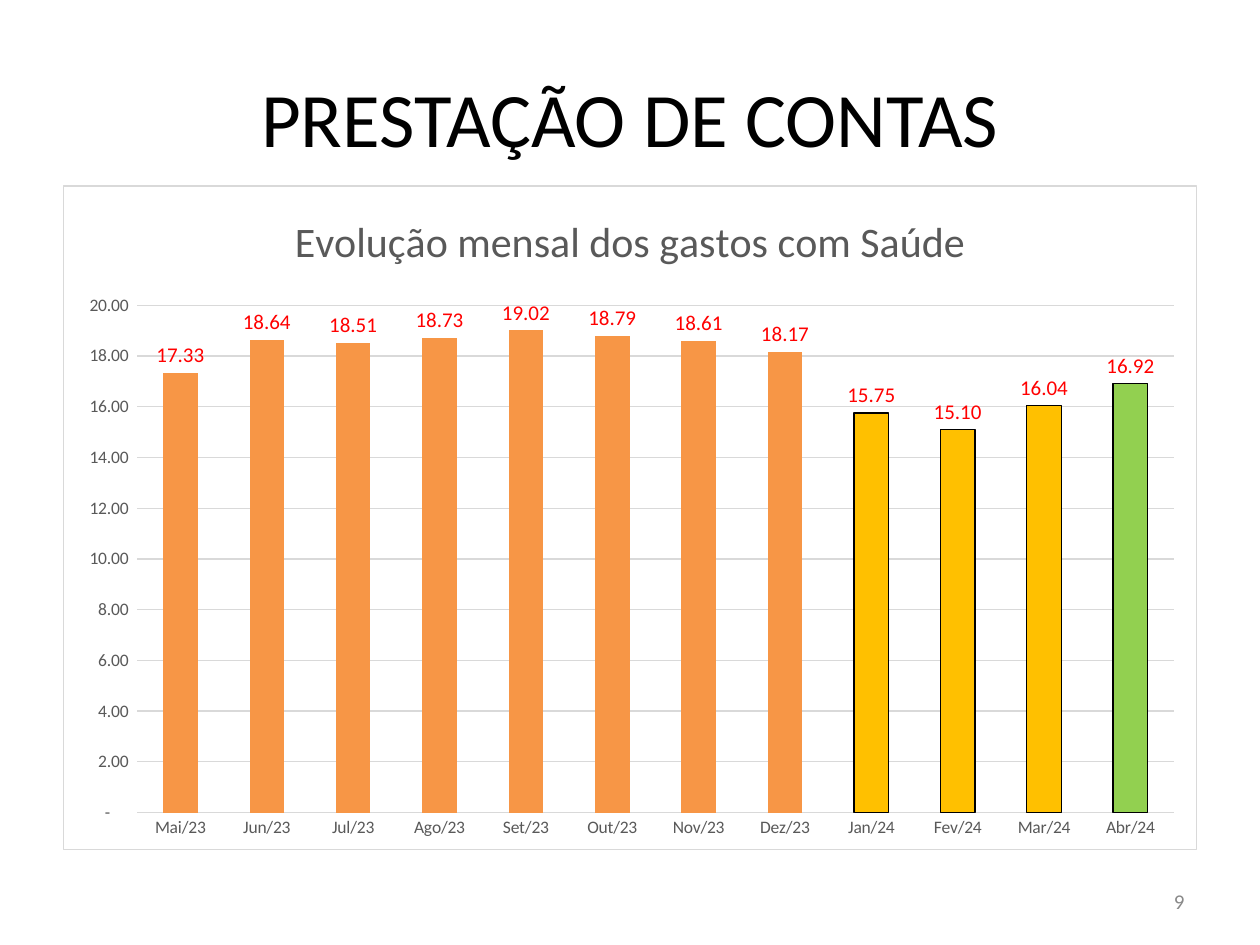
from dataclasses import dataclass

from lxml import etree
from pptx import Presentation
from pptx.chart.data import CategoryChartData
from pptx.dml.color import RGBColor as RGB
from pptx.enum.chart import XL_CHART_TYPE as ChartType
from pptx.enum.chart import XL_LABEL_POSITION as LabelPos
from pptx.enum.chart import XL_TICK_MARK as Tick
from pptx.enum.text import MSO_ANCHOR as Anchor
from pptx.enum.text import PP_ALIGN as Align
from pptx.oxml import parse_xml
from pptx.oxml.ns import nsdecls, qn
from pptx.util import Inches, Pt


@dataclass(frozen=True)
class Theme:
    font: str = "Calibri"
    white: str = "FFFFFF"
    black: str = "000000"
    grey: str = "595959"
    page_grey: str = "898989"
    rule: str = "D9D9D9"
    label: str = "FF0000"
    series: str = "4F81BD"
    year_2023: str = "F79646"
    year_2024: str = "FFC000"
    latest: str = "92D050"
    title_size: int = 44
    chart_title_size: int = 24
    label_size: int = 12
    axis_size: int = 10


T = Theme()
NUMBER_FORMAT = r'_(* #,##0.00_);_(* \(#,##0.00\);_(* "-"??_);_(@_)'


def style_font(font, size, color):
    font.name = T.font
    font.size = Pt(size)
    font.bold = False
    font.color.rgb = RGB.from_string(color)


def add_text(s, text, box, size, color, align):
    sp = s.shapes.add_textbox(*map(Inches, box))
    tf = sp.text_frame
    tf.word_wrap = True
    tf.vertical_anchor = Anchor.MIDDLE
    tf.text = text
    p = tf.paragraphs[0]
    p.alignment = align
    style_font(p.runs[0].font, size, color)
    return sp


prs = Presentation()
prs.slide_width, prs.slide_height = Inches(10), Inches(7.5)
s = prs.slides.add_slide(prs.slide_layouts[6])

# Page number and title
add_text(s, "9", (7.17, 6.95, 2.33, 0.4), T.label_size, T.page_grey, Align.RIGHT)
title = add_text(s, "PRESTAÇÃO DE CONTAS", (0.5, 0.3, 9, 1.25),
                 T.title_size, T.black, Align.CENTER)
title.fill.solid()
title.fill.fore_color.rgb = RGB.from_string(T.white)

# Monthly health spending
spending = {
    "Mai/23": 17.33, "Jun/23": 18.64, "Jul/23": 18.51, "Ago/23": 18.73,
    "Set/23": 19.02, "Out/23": 18.79, "Nov/23": 18.61, "Dez/23": 18.17,
    "Jan/24": 15.75, "Fev/24": 15.10, "Mar/24": 16.04, "Abr/24": 16.92,
}
data = CategoryChartData(number_format=NUMBER_FORMAT)
data.categories = list(spending)
data.add_series("Series 1", list(spending.values()))
chart = s.shapes.add_chart(ChartType.COLUMN_CLUSTERED, Inches(0.5), Inches(1.47),
                           Inches(9), Inches(5.28), data).chart
style_font(chart.font, T.axis_size, T.black)
chart.has_legend = False
chart.has_title = True
tf = chart.chart_title.text_frame
tf.text = "Evolução mensal dos gastos com Saúde"
style_font(tf.paragraphs[0].runs[0].font, T.chart_title_size, T.grey)
chart.chart_title.include_in_layout = False

# Chart frame and plot position
chart_xml = chart.element.find(qn("c:chart"))
chart_xml.addnext(parse_xml(
    f'<c:spPr {nsdecls("c", "a")}>'
    f'<a:solidFill><a:srgbClr val="{T.white}"/></a:solidFill>'
    f'<a:ln w="9525"><a:solidFill><a:srgbClr val="{T.rule}"/></a:solidFill></a:ln>'
    '</c:spPr>'))
plot_area = chart_xml.find(qn("c:plotArea"))
for old in plot_area.findall(qn("c:layout")):
    plot_area.remove(old)
layout = etree.Element(qn("c:layout"))
manual = etree.SubElement(layout, qn("c:manualLayout"))
for tag, value in (("layoutTarget", "inner"), ("xMode", "edge"), ("yMode", "edge"),
                   ("x", "0.065"), ("y", "0.18"), ("w", "0.915"), ("h", "0.764")):
    etree.SubElement(manual, qn(f"c:{tag}")).set("val", value)
plot_area.insert(0, layout)

# Axes
for axis in (chart.category_axis, chart.value_axis):
    axis.major_tick_mark = axis.minor_tick_mark = Tick.NONE
    style_font(axis.tick_labels.font, T.axis_size, T.grey)
    axis.format.line.fill.background()
axis = chart.value_axis
axis.minimum_scale, axis.maximum_scale, axis.major_unit = 0, 20, 2
axis.tick_labels.number_format = NUMBER_FORMAT
axis.tick_labels.number_format_is_linked = False
axis.has_major_gridlines = True
grid = axis.major_gridlines.format.line
grid.width = Pt(0.75)
grid.color.rgb = RGB.from_string(T.rule)

# Columns, coloured by year with the latest month singled out
plot = chart.plots[0]
plot.gap_width = 150
plot.vary_by_categories = False
series = plot.series[0]
series.invert_if_negative = False
series.format.fill.solid()
series.format.fill.fore_color.rgb = RGB.from_string(T.series)
for i, month in enumerate(spending):
    color = T.year_2023 if month.endswith("/23") else T.year_2024
    if i == len(spending) - 1:
        color = T.latest
    fmt = series.points[i].format
    fmt.fill.solid()
    fmt.fill.fore_color.rgb = RGB.from_string(color)
    if month.endswith("/24"):
        fmt.line.width = Pt(0.75)
        fmt.line.color.rgb = RGB.from_string(T.black)

# Value labels
labels = series.data_labels
labels.show_value = True
labels.position = LabelPos.OUTSIDE_END
labels.number_format = NUMBER_FORMAT
labels.number_format_is_linked = False
style_font(labels.font, T.label_size, T.label)

prs.save("out.pptx")
